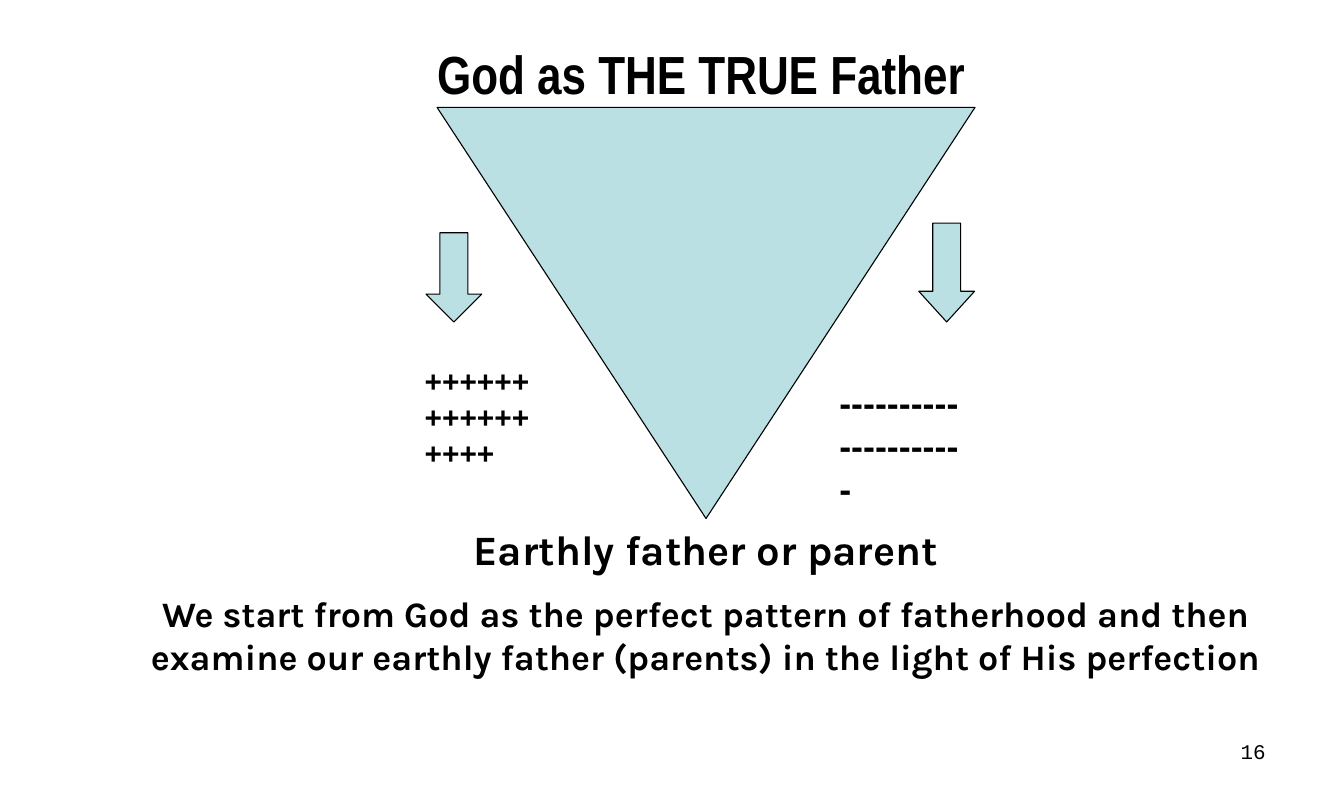
from pptx import Presentation
from pptx.dml.color import RGBColor
from pptx.enum import shapes, text
from pptx.util import Cm, Pt

BLACK = RGBColor(0x00, 0x00, 0x00)
PALE_TEAL = RGBColor(0xBB, 0xE0, 0xE3)
CENTER, LEFT, RIGHT = text.PP_ALIGN.CENTER, text.PP_ALIGN.LEFT, text.PP_ALIGN.RIGHT
TRIANGLE = shapes.MSO_SHAPE.ISOSCELES_TRIANGLE
DOWN_ARROW = shapes.MSO_SHAPE.DOWN_ARROW

prs = Presentation()
prs.slide_width, prs.slide_height = Cm(31.8), Cm(19.05)
s = prs.slides.add_slide(prs.slide_layouts[6])

# Inverted triangle and the two arrows beside it
for kind, box, adjustments, rotation in [
    (TRIANGLE, (10.34, 2.54, 12.73, 9.73), [0.5], 180),
    (DOWN_ARROW, (10.08, 5.51, 1.32, 2.11), [0.5, 0.5], 0),
    (DOWN_ARROW, (21.74, 5.28, 1.32, 2.34), [0.5, 0.55], 0),
]:
    sp = s.shapes.add_shape(kind, *map(Cm, box))
    for i, value in enumerate(adjustments):
        sp.adjustments[i] = value
    sp.rotation = rotation
    sp.shadow.inherit = False
    sp.fill.solid()
    sp.fill.fore_color.rgb = PALE_TEAL
    sp.line.color.rgb = BLACK
    sp.line.width = Pt(0.75)

# Title, plus and minus marks, closing statement and page number
for box, align, font, lines in [
    ((2.95, 0.84, 27.28, 16.18), CENTER, {"name": "Arial Narrow", "bold": True},
     [("God as THE TRUE Father", 36)]),
    ((9.8, 8.46, 3.18, 2.82), LEFT, {"name": "Arial", "bold": True},
     [("++++++++++++++++", 20)]),
    ((19.61, 8.89, 3.45, 3.33), LEFT, {"name": "Arial", "bold": True},
     [("---------------------", 24)]),
    ((3.18, 12.27, 27.03, 5.05), CENTER, {"name": "Karla", "bold": True},
     [("Earthly father or parent", 28),
      ("We start from God as the perfect pattern of fatherhood and then "
       "examine our earthly father (parents) in the light of His perfection", 24)]),
    ((22.78, 17.35, 7.42, 1.32), RIGHT, {"name": "Courier New", "bold": False},
     [("16", 14)]),
]:
    tf = s.shapes.add_textbox(*map(Cm, box)).text_frame
    tf.word_wrap = True
    for i, (line, size) in enumerate(lines):
        p = tf.add_paragraph() if i else tf.paragraphs[0]
        p.alignment = align
        if i:
            p.space_before = Pt(size / 2)
        r = p.add_run()
        r.text = line
        for name, value in {**font, "size": Pt(size)}.items():
            setattr(r.font, name, value)
        r.font.color.rgb = BLACK

prs.save("out.pptx")
